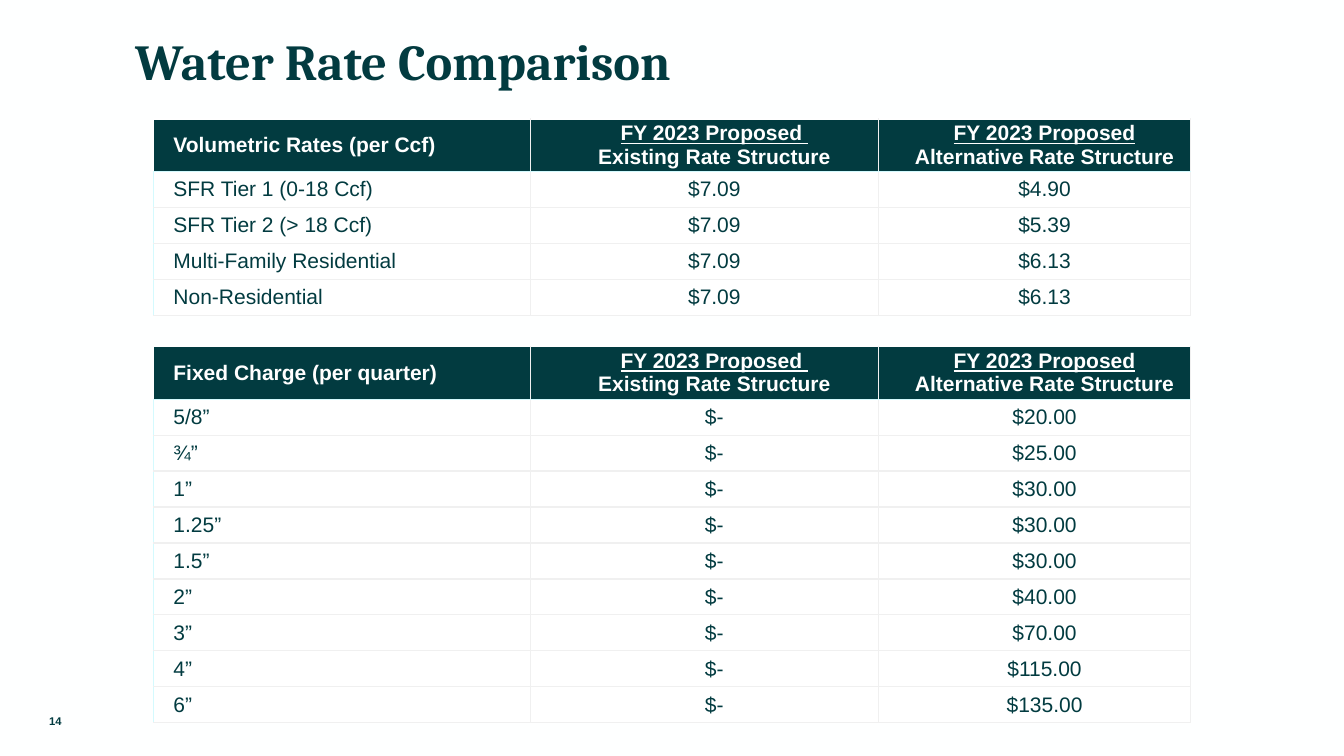
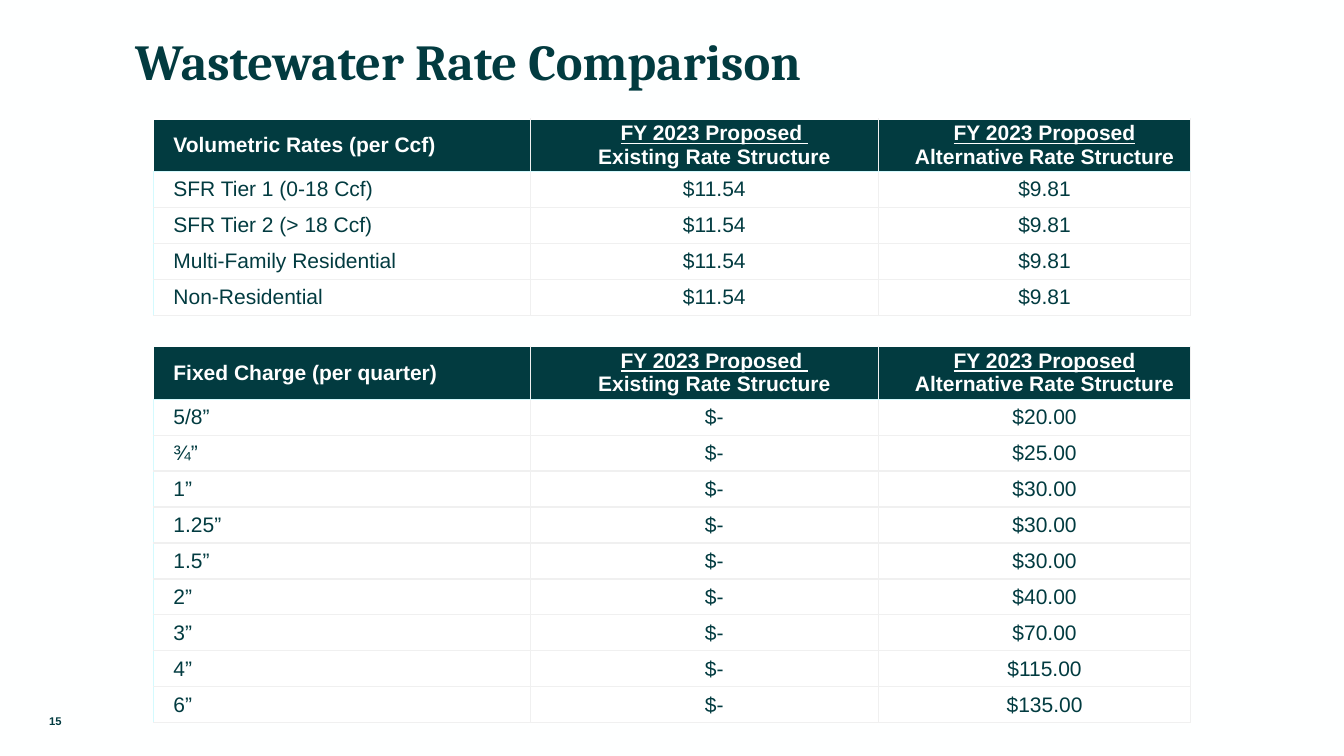
from dataclasses import dataclass

from lxml.etree import SubElement
from pptx import Presentation
from pptx.dml.color import RGBColor as RGB
from pptx.enum.text import MSO_ANCHOR as Anchor, PP_ALIGN as Align
from pptx.oxml.ns import qn
from pptx.util import Inches, Pt


@dataclass(frozen=True)
class Theme:
    back: str = "FEFFFF"
    dark: str = "023B40"
    white: str = "FFFFFF"
    grid: str = "F0F0F0"
    pale: str = "D4FAFE"
    head_font: str = "Cambria"
    body_font: str = "Arial"
    title_size: int = 36
    table_size: int = 15
    number_size: int = 8


T = Theme()
COLS = [3.74, 3.45, 3.1]
LEFT, HEADER_H, ROW_H = 1.52, 0.52, 0.357
VOLUME_TOP, FIXED_TOP = 1.18, 3.44

PERIOD = "FY 2023 Proposed"
PROPOSALS = [[PERIOD + " ", "Existing Rate Structure"],
             [PERIOD, "Alternative Rate Structure"]]
CUSTOMERS = ["SFR Tier 1 (0-18 Ccf)", "SFR Tier 2 (> 18 Ccf)",
             "Multi-Family Residential", "Non-Residential"]
FIXED = [("5/8”", "$-", "$20.00"), ("¾”", "$-", "$25.00"),
         ("1”", "$-", "$30.00"), ("1.25”", "$-", "$30.00"),
         ("1.5”", "$-", "$30.00"), ("2”", "$-", "$40.00"),
         ("3”", "$-", "$70.00"), ("4”", "$-", "$115.00"),
         ("6”", "$-", "$135.00")]
SLIDES = [
    (14, "Water Rate Comparison", ["$7.09"] * 4,
     ["$4.90", "$5.39", "$6.13", "$6.13"]),
    (15, "Wastewater Rate Comparison", ["$11.54"] * 4, ["$9.81"] * 4),
]


def write(tf, *lines, size=T.table_size, font=T.body_font, color=T.dark,
          bold=False, align=Align.LEFT, underline_first=False):
    for i, line in enumerate(lines):
        p = tf.paragraphs[0] if i == 0 else tf.add_paragraph()
        p.alignment = align
        r = p.add_run()
        r.text = line
        r.font.size, r.font.name, r.font.bold = Pt(size), font, bold
        r.font.color.rgb = RGB.from_string(color)
        r.font.underline = underline_first and i == 0


def border(cell, sides):
    """Draw the given sides, a dict of L, R, T, B to (colour, points)."""
    tc_pr = cell._tc.get_or_add_tcPr()
    for side in "LRTB":
        if side in sides:
            color, width = sides[side]
            ln = SubElement(tc_pr, qn(f"a:ln{side}"), w=str(Pt(width)))
            fill = SubElement(ln, qn("a:solidFill"))
            SubElement(fill, qn("a:srgbClr"), val=color)


prs = Presentation()
prs.slide_width, prs.slide_height = Inches(13.33), Inches(7.5)
grid_line, pale_line = (T.grid, 1), (T.pale, 0.25)

for number, title, existing, alternative in SLIDES:
    s = prs.slides.add_slide(prs.slide_layouts[6])
    s.background.fill.solid()
    s.background.fill.fore_color.rgb = RGB.from_string(T.back)

    tf = s.shapes.add_textbox(Inches(1.34), Inches(0.48),
                              Inches(10.89), Inches(0.42)).text_frame
    tf.word_wrap, tf.vertical_anchor = True, Anchor.BOTTOM
    tf.margin_left = tf.margin_right = tf.margin_bottom = 0
    tf.margin_top = Inches(0.21)
    write(tf, title, size=T.title_size, font=T.head_font, bold=True)

    tf = s.shapes.add_textbox(0, Inches(6.95),
                              Inches(1.1), Inches(0.4)).text_frame
    tf.word_wrap, tf.vertical_anchor = True, Anchor.MIDDLE
    write(tf, str(number), size=T.number_size, bold=True, align=Align.CENTER)

    volume = list(zip(CUSTOMERS, existing, alternative))
    for top, heading, body in [
            (VOLUME_TOP, "Volumetric Rates (per Ccf)", volume),
            (FIXED_TOP, "Fixed Charge (per quarter)", FIXED)]:
        rows = [[[heading], *PROPOSALS]]
        rows += [[[value] for value in values] for values in body]
        height = HEADER_H + ROW_H * len(body)
        table = s.shapes.add_table(len(rows), len(COLS), Inches(LEFT),
                                   Inches(top), Inches(sum(COLS)),
                                   Inches(height)).table
        table.first_row = table.horz_banding = False
        for column, width in zip(table.columns, COLS):
            column.width = Inches(width)

        for i, row in enumerate(rows):
            header = i == 0
            table.rows[i].height = Inches(HEADER_H if header else ROW_H)
            for j, lines in enumerate(row):
                cell = table.cell(i, j)
                sides = {"R": grid_line,
                         "B": pale_line if header else grid_line}
                if not header:
                    sides["T"] = pale_line if i == 1 else grid_line
                if j > 0:
                    sides["L"] = grid_line
                elif not header:
                    sides["L"] = pale_line
                border(cell, sides)
                cell.fill.solid()
                cell.fill.fore_color.rgb = RGB.from_string(
                    T.dark if header else T.white)
                cell.vertical_anchor = Anchor.MIDDLE
                cell.margin_left = Inches(0.2)
                cell.margin_top = cell.margin_right = cell.margin_bottom = 0
                write(cell.text_frame, *lines, bold=header,
                      color=T.white if header else T.dark,
                      align=Align.CENTER if j else Align.LEFT,
                      underline_first=header and j > 0)

prs.save("out.pptx")
